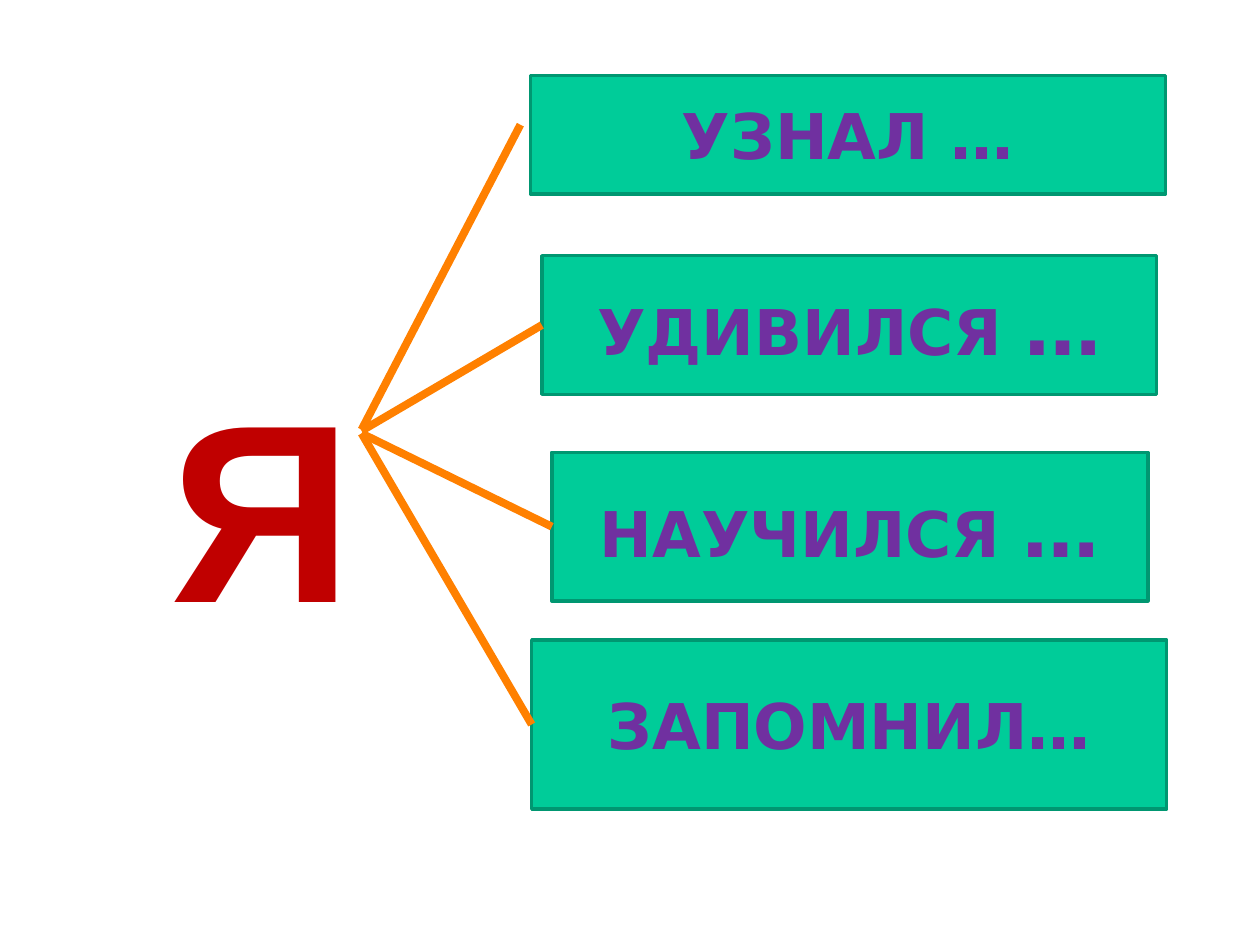
from typing import NamedTuple

from lxml.etree import SubElement
from pptx import Presentation
from pptx.dml.color import RGBColor
from pptx.enum.shapes import MSO_CONNECTOR, MSO_SHAPE
from pptx.enum.text import MSO_ANCHOR, PP_ALIGN
from pptx.oxml.ns import qn
from pptx.util import Inches, Pt

GREEN = RGBColor(0x00, 0xCC, 0x99)
EDGE = RGBColor(0x00, 0x97, 0x71)
PURPLE = RGBColor(0x70, 0x30, 0xA0)
RED = RGBColor(0xC0, 0x00, 0x00)
ORANGE = RGBColor(0xFF, 0x80, 0x00)
CELL = Inches(0.1)


class Card(NamedTuple):
    """A green answer box, in grid cells, and the row its ray starts on."""
    col: float
    row: float
    cols: float
    rows: float
    word: str
    start: float
    dots: str = ""
    tip: tuple[float, float] | None = None


CARDS = (
    Card(42.1, 6, 50.4, 9.4, "УЗНАЛ …", 34.1, tip=(41.3, 9.9)),
    Card(43, 20.3, 48.8, 11, "УДИВИЛСЯ ", 34.2, "…"),
    Card(43.8, 35.9, 47.3, 11.8, "НАУЧИЛСЯ ", 34.4, "…"),
    Card(42.2, 50.8, 50.4, 13.4, "ЗАПОМНИЛ…", 34.4),
)
HUB = 28.7
BOLD = {"name": "DejaVu Sans", "bold": True}


def grid(*vals: float) -> list[int]:
    """Turn grid cells into slide lengths."""
    return [round(val * CELL) for val in vals]


def put(obj, look: dict) -> None:
    """Set each attribute named in the look."""
    for key, val in look.items():
        setattr(obj, key, val)


def write(para, text: str, size: float, tint: RGBColor, look: dict) -> None:
    """Add a centred run to a paragraph."""
    para.alignment = PP_ALIGN.CENTER
    run = para.add_run()
    run.text = text
    put(run.font, look | {"size": Pt(size)})
    run.font.color.rgb = tint


def draw_card(slide, card: Card):
    """Draw one answer box with its word."""
    box = slide.shapes.add_shape(MSO_SHAPE.RECTANGLE, *grid(*card[:4]))
    box.shadow.inherit = False
    box.fill.solid()
    box.fill.fore_color.rgb = GREEN
    box.line.color.rgb = EDGE
    box.line.width = Pt(2)
    put(box.text_frame, {"word_wrap": True, "vertical_anchor": MSO_ANCHOR.MIDDLE})
    para = box.text_frame.paragraphs[0]
    write(para, card.word, 36, PURPLE, BOLD)
    if card.dots:
        write(para, card.dots, 44, PURPLE, BOLD)
    return box


def draw_ray(slide, card: Card, box) -> None:
    """Draw the ray from the letter to a box."""
    tip = card.tip or (card.col, card.row + card.rows / 2)
    ray = slide.shapes.add_connector(
        MSO_CONNECTOR.STRAIGHT, *grid(HUB, card.start, *tip))
    if not card.tip:
        ray.end_connect(box, 1)
    ray.line.color.rgb = ORANGE
    ray.line.width = Pt(4.5)
    SubElement(ray.element.spPr, qn("a:effectLst"))


def draw_self(slide) -> None:
    """Draw the big red letter."""
    box = slide.shapes.add_textbox(*grid(4.3, 0, 32.9, 48))
    put(box.text_frame, {"word_wrap": True, "margin_top": Inches(2.77),
                         "margin_bottom": Inches(0.05),
                         "vertical_anchor": MSO_ANCHOR.TOP})
    write(box.text_frame.paragraphs[0], "Я", 145, RED,
          {"name": "Arial", "bold": True})


def main() -> None:
    """Build and save the slide."""
    deck = Presentation()
    put(deck, {"slide_width": Inches(10), "slide_height": Inches(7.5)})
    slide = deck.slides.add_slide(deck.slide_layouts[6])
    draw_self(slide)
    boxes = [draw_card(slide, card) for card in CARDS]
    for card, box in zip(CARDS, boxes):
        draw_ray(slide, card, box)
    deck.save("out.pptx")


if __name__ == "__main__":
    main()
